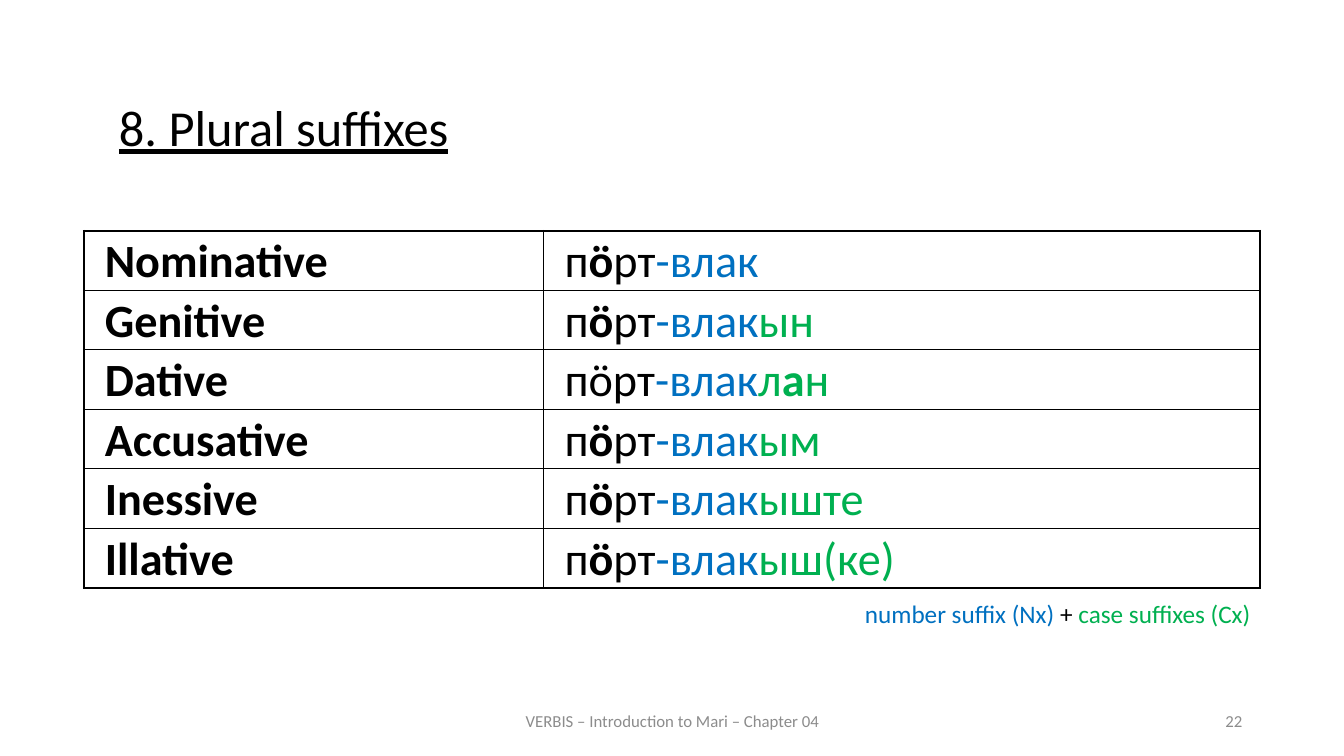
"""Builds a slide with a table of the Mari plural suffixes by case."""
from lxml import etree
from pptx import Presentation
from pptx.dml.color import RGBColor
from pptx.enum.text import MSO_ANCHOR, PP_ALIGN
from pptx.oxml.ns import qn
from pptx.util import Inches, Pt

LEFT, CENTER, RIGHT, JUSTIFY = PP_ALIGN.LEFT, PP_ALIGN.CENTER, PP_ALIGN.RIGHT, PP_ALIGN.JUSTIFY
TOP, MIDDLE = MSO_ANCHOR.TOP, MSO_ANCHOR.MIDDLE
COLORS = {"text": "000000", "number": "0070C0", "case": "00B050", "footer": "8C8C8C"}
TABLE_LEFT, TABLE_TOP, ROW_HEIGHT = 0.83, 2.29, 0.58
COLUMNS = [4.56, 7.11]
THIN, THICK = 1, 1.5


def write(tf, runs, size, align, anchor=TOP):
    """Fill a text frame with (text, colour, bold) runs."""
    tf.word_wrap = True
    tf.vertical_anchor = anchor
    p = tf.paragraphs[0]
    p.alignment = align
    for text, color, bold in runs:
        r = p.add_run()
        r.text = text
        r.font.name = "Calibri"
        r.font.size = Pt(size)
        r.font.bold = bold
        r.font.color.rgb = RGBColor.from_string(COLORS[color])
    return p


def set_border(cell, sides):
    """Draw the cell's borders, given as widths by side."""
    tcPr = cell._tc.get_or_add_tcPr()
    for i, (side, width) in enumerate(sides.items()):
        ln = etree.Element(qn(f"a:ln{side}"), w=str(Pt(width)))
        fill = etree.SubElement(ln, qn("a:solidFill"))
        etree.SubElement(fill, qn("a:srgbClr"), val=COLORS["text"])
        tcPr.insert(i, ln)


prs = Presentation()
prs.slide_width, prs.slide_height = Inches(13.33), Inches(7.5)
s = prs.slides.add_slide(prs.slide_layouts[5])

title = s.shapes.title
title.left, title.top, title.width, title.height = map(Inches, (1.08, 0.57, 11.5, 1.45))
p = write(title.text_frame, [("8. Plural suffixes", "text", False)], 36, LEFT, MIDDLE)
p.line_spacing = 0.9
p.space_before = Pt(12)
p.runs[0].font.underline = True

stressed_stem = [("п", "text", False), ("ӧ", "text", True), ("рт", "text", False)]
plain_stem = [("пӧрт", "text", False)]
plural = [("-влак", "number", False)]
cases = [
    ("Nominative", stressed_stem, []),
    ("Genitive", stressed_stem, [("ын", "case", False)]),
    ("Dative", plain_stem, [("л", "case", False), ("а", "case", True), ("н", "case", False)]),
    ("Accusative", stressed_stem, [("ым", "case", False)]),
    ("Inessive", stressed_stem, [("ыште", "case", False)]),
    ("Illative", stressed_stem, [("ыш(ке)", "case", False)]),
]

frame = s.shapes.add_table(len(cases), len(COLUMNS), Inches(TABLE_LEFT), Inches(TABLE_TOP),
                           Inches(sum(COLUMNS)), Inches(ROW_HEIGHT * len(cases)))
table = frame.table
table.first_row = table.horz_banding = False
for column, width in zip(table.columns, COLUMNS):
    column.width = Inches(width)

last_row, last_col = len(cases) - 1, len(COLUMNS) - 1
for i, (name, stem, suffix) in enumerate(cases):
    table.rows[i].height = Inches(ROW_HEIGHT)
    for j, runs in enumerate([[(name, "text", True)], stem + plural + suffix]):
        cell = table.cell(i, j)
        cell.margin_left = cell.margin_right = Inches(0.21)
        cell.margin_top, cell.margin_bottom = Inches(0.03), 0
        cell.fill.background()
        write(cell.text_frame, runs, 33, JUSTIFY)
        set_border(cell, {"L": THICK if j == 0 else THIN,
                          "R": THICK if j == last_col else THIN,
                          "T": THICK if i == 0 else THIN,
                          "B": THICK if i == last_row else THIN})

legend = [("number suffix (Nx) ", "number", False), ("+ ", "text", False),
          ("case suffixes (Cx)", "case", False)]
footer = [("VERBIS – Introduction to Mari – Chapter 04", "footer", False)]
page = [("22", "footer", False)]
for left, top, width, runs, size, align, anchor in [
    (8.32, 5.89, 4.18, legend, 18, RIGHT, TOP),
    (4.42, 6.95, 4.5, footer, 12, CENTER, MIDDLE),
    (9.42, 6.95, 3, page, 12, RIGHT, MIDDLE),
]:
    sp = s.shapes.add_textbox(Inches(left), Inches(top), Inches(width), Inches(0.4))
    write(sp.text_frame, runs, size, align, anchor)

prs.save("out.pptx")
